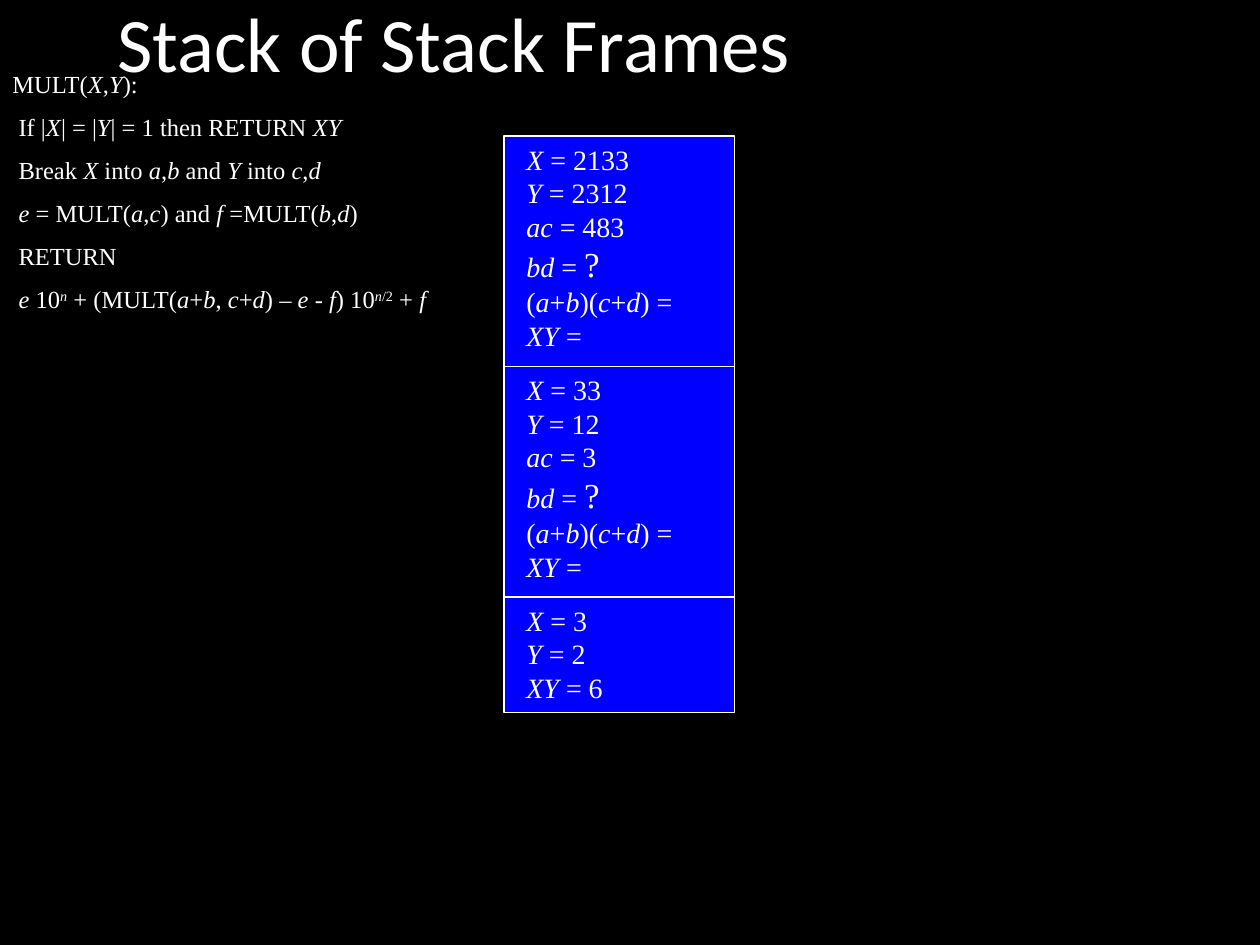
from itertools import groupby

from pptx import Presentation
from pptx.dml.color import RGBColor
from pptx.enum.shapes import MSO_SHAPE
from pptx.enum.text import MSO_ANCHOR, MSO_AUTO_SIZE, PP_ALIGN
from pptx.util import Inches, Pt

RECTANGLE = MSO_SHAPE.RECTANGLE
MIDDLE = MSO_ANCHOR.MIDDLE
GROW = MSO_AUTO_SIZE.SHAPE_TO_FIT_TEXT
LEFT = PP_ALIGN.LEFT

# Content: *...* is italic, ^...^ is superscript, ~...~ is enlarged
TITLE = "Stack of Stack Frames"
ALGORITHM = [
    "MULT(*X*,*Y*):",
    " If |*X*| = |*Y*| = 1 then RETURN *XY*",
    " Break *X* into *a*,*b* and *Y* into *c*,*d*",
    " *e* = MULT(*a*,*c*) and *f* =MULT(*b*,*d*)",
    " RETURN",
    " *e* 10^*n*^ + (MULT(*a*+*b*, *c*+*d*) – *e* - *f*) 10^*n*/2^ + *f*",
]
PENDING = ["*bd* = ~?~", "(*a*+*b*)(*c*+*d*) =", "*XY* ="]
FRAMES = [  # lines, text width, height in half frames
    (["*X* = 2133", "*Y* = 2312", "*ac* = 483"] + PENDING, 1.42, 2),
    (["*X* = 33", "*Y* = 12", "*ac* = 3"] + PENDING, 1.42, 2),
    (["*X* = 3", "*Y* = 2", "*XY* = 6"], 0.81, 1),
]

THEME = {
    "background": RGBColor(0x00, 0x00, 0x00),
    "frame": RGBColor(0x00, 0x00, 0xFF),
    "text": RGBColor(0xFF, 0xFF, 0xFF),
    "title_font": "Calibri",
    "body_font": "Times New Roman",
    "title_size": Pt(44),
    "algorithm_size": Pt(14),
    "frame_size": Pt(16),
    "large_size": Pt(20),
}
STACK_LEFT, STACK_TOP, STACK_WIDTH = 4, 1.08, 1.83
HALF_FRAME = STACK_WIDTH / 2
TEXT_INDENT = 0.08


def style_font(font, name, size):
    font.name, font.size = name, size
    font.color.rgb = THEME["text"]


def marked_runs(line):
    """Yield (text, active marks) for each stretch of one style."""
    active, styled = frozenset(), []
    for character in line:
        if character in "*^~":
            active = active ^ {character}
        else:
            styled.append((character, active))
    for marks, pairs in groupby(styled, key=lambda pair: pair[1]):
        yield "".join(character for character, _ in pairs), marks


def write_lines(text_frame, lines, size, space_before=0):
    for index, line in enumerate(lines):
        paragraph = text_frame.paragraphs[0] if index == 0 else text_frame.add_paragraph()
        paragraph.alignment = LEFT
        paragraph.space_before = Pt(space_before)
        style_font(paragraph.font, THEME["body_font"], size)
        for text, marks in marked_runs(line):
            run = paragraph.add_run()
            run.text = text
            if "*" in marks:
                run.font.italic = True
            if "~" in marks:
                run.font.size = THEME["large_size"]
            if "^" in marks:
                run.font._element.set("baseline", "30000")


def add_text(shapes, box, lines, size, wrap, space_before=0):
    text_frame = shapes.add_textbox(*map(Inches, box)).text_frame
    text_frame.word_wrap = wrap
    text_frame.auto_size = GROW
    write_lines(text_frame, lines, size, space_before)


def add_frame(slide, top, height, lines, text_width):
    group = slide.shapes.add_group_shape()
    box = (STACK_LEFT, top, STACK_WIDTH, height)
    rectangle = group.shapes.add_shape(RECTANGLE, *map(Inches, box))
    rectangle.shadow.inherit = False
    rectangle.fill.solid()
    rectangle.fill.fore_color.rgb = THEME["frame"]
    rectangle.line.color.rgb = THEME["text"]
    rectangle.line.width = Pt(0.75)
    text_height = 1.77 if len(lines) > 3 else 0.9
    text_box = (STACK_LEFT + TEXT_INDENT, top, text_width, text_height)
    add_text(group.shapes, text_box, lines, THEME["frame_size"], wrap=False)


def main():
    presentation = Presentation()
    presentation.slide_width, presentation.slide_height = Inches(10), Inches(7.5)
    slide = presentation.slides.add_slide(presentation.slide_layouts[5])
    slide.background.fill.solid()
    slide.background.fill.fore_color.rgb = THEME["background"]

    # Title
    title = slide.shapes.title
    title.left, title.top = Inches(0.83), Inches(-0.25)
    title.width, title.height = Inches(8.5), Inches(1.25)
    title.text_frame.text = TITLE
    title.text_frame.vertical_anchor = MIDDLE
    paragraph = title.text_frame.paragraphs[0]
    paragraph.alignment = LEFT
    paragraph.line_spacing = 0.9
    style_font(paragraph.font, THEME["title_font"], THEME["title_size"])

    # Stack of frames, from the top down
    top = STACK_TOP
    for lines, text_width, halves in FRAMES:
        height = halves * HALF_FRAME
        add_frame(slide, top, height, lines, text_width)
        top += height

    # Algorithm
    add_text(slide.shapes, (0, 0.5, 4.25, 2.08), ALGORITHM,
             THEME["algorithm_size"], wrap=True, space_before=7.8)

    presentation.save("out.pptx")


if __name__ == "__main__":
    main()
